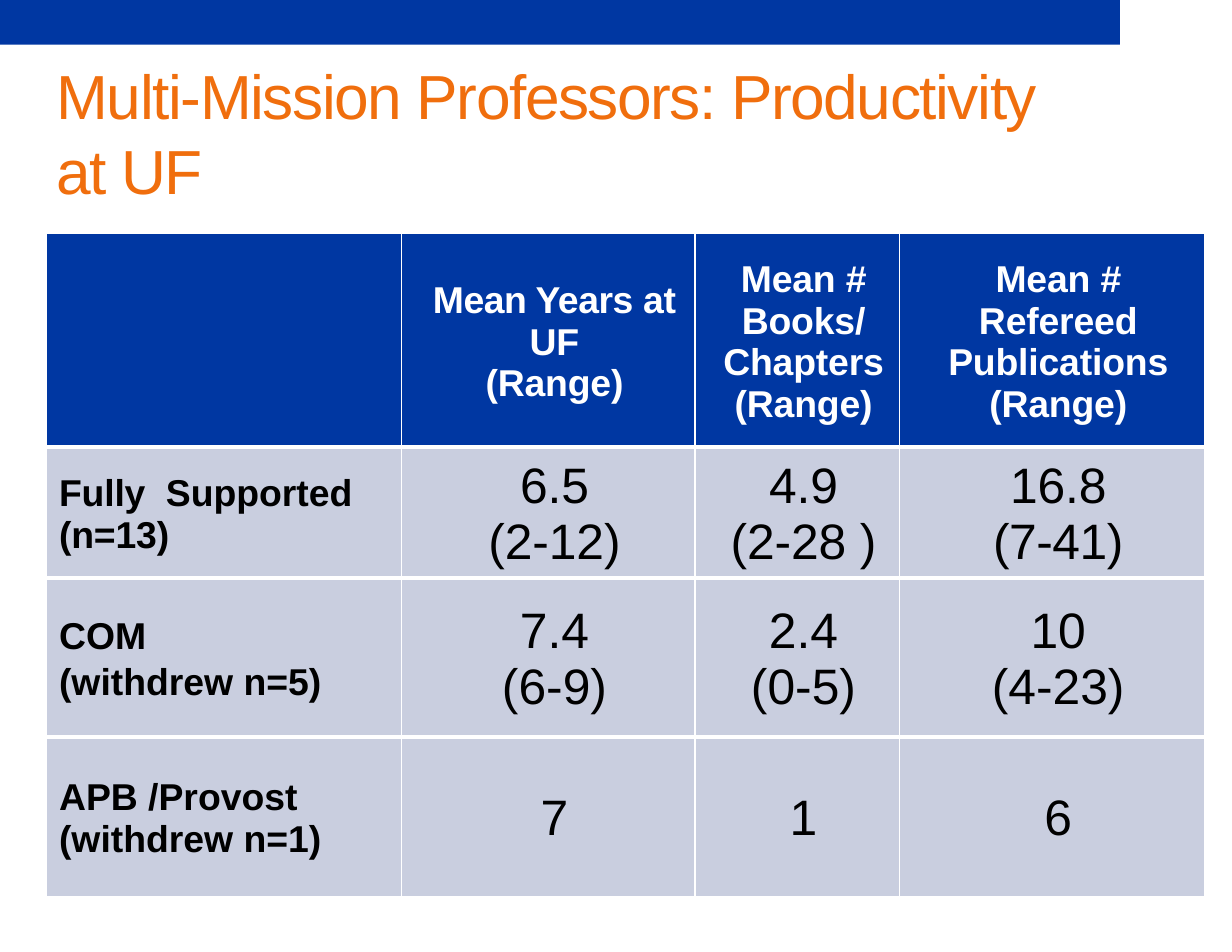
from lxml.etree import SubElement
from pptx import Presentation
from pptx.dml.color import RGBColor
from pptx.enum.shapes import MSO_SHAPE
from pptx.enum.text import MSO_ANCHOR, MSO_AUTO_SIZE, PP_ALIGN
from pptx.oxml.ns import qn
from pptx.util import Pt

BLUE, ORANGE, GREY = "0037A2", "F06E0D", "C9CEDF"
WHITE, BLACK = "FFFFFF", "000000"

COLUMN_WIDTHS = [228.25, 188.5, 131.75, 195.75]
ROW_HEIGHTS = [137.5, 84.25, 102.25, 102.25]

HEADINGS = [
    [],
    [[("Mean Years ", -0.3), ("at", -0.1)], [("UF", -0.1)], [("(Range)", -0.1)]],
    [[("Mean # Books/", -0.1)], [("Chapters", -0.1)], [("(Range)", -0.1)]],
    [[("Mean # Refereed", -0.1)], [("Publications", -0.1)], [("(Range)", -0.1)]],
]
GROUPS = [
    [
        [[("Fully  ", -0.1), ("Supported ", 0), ("(n=13)", -0.1)]],
        [[("6.5", -0.1)], [("(2-12)", -0.1)]],
        [[("4.9", -0.1)], [("(2-28 ", -0.1), (")", 0)]],
        [[("16.8", -0.1)], [("(7-41)", -0.3)]],
    ],
    [
        [[("COM", 0)], [("(withdrew n=5)", 0)]],
        [[("7.4", 0)], [("(6-9)", 0)]],
        [[("2.4", 0)], [("(0-5)", 0)]],
        [[("10", 0)], [("(4-23)", 0)]],
    ],
    [
        [[("APB /Provost\n(withdrew n=1)", 0)]],
        [[("7", 0)]],
        [[("1", 0)]],
        [[("6", 0)]],
    ],
]
GROUP_SPACE_BEFORE = [(2.4, 2.5), (2.6, 0), (2.4, 0)]


def colour(value):
    return RGBColor.from_string(value)


def add_run(paragraph, words, size, ink, bold=False, spacing=0):
    for number, line in enumerate(words.split("\n")):
        if number:
            paragraph.add_line_break()
        run = paragraph.add_run()
        run.text = line
        run.font.name = "Arial"
        run.font.size = Pt(size)
        run.font.bold = bold
        run.font.color.rgb = colour(ink)
        if spacing:
            run.font._element.set("spc", str(round(spacing * 100)))


def set_indent(paragraph, left):
    properties = paragraph._p.get_or_add_pPr()
    properties.set("marL", str(Pt(left)))
    properties.set("indent", "0")


def set_margins(holder, top):
    holder.margin_left = holder.margin_right = holder.margin_bottom = 0
    holder.margin_top = Pt(top)


def set_borders(cell, top, bottom):
    properties = cell._tc.get_or_add_tcPr()
    sides = [("a:lnL", 1), ("a:lnR", 1), ("a:lnT", top), ("a:lnB", bottom)]
    for position, (side, width) in enumerate(sides):
        line = SubElement(properties, qn(side), w=str(Pt(width)))
        fill = SubElement(line, qn("a:solidFill"))
        SubElement(fill, qn("a:srgbClr"), val=WHITE)
        properties.insert(position, line)


def add_band(slide, left, top, width, height):
    band = slide.shapes.add_shape(
        MSO_SHAPE.RECTANGLE, Pt(left), Pt(top), Pt(width), Pt(height))
    band.shadow.inherit = False
    band.fill.solid()
    band.fill.fore_color.rgb = colour(BLUE)
    band.line.fill.background()


def place_title(slide, left, top, width, height):
    title = slide.shapes.title
    title.left, title.top = Pt(left), Pt(top)
    title.width, title.height = Pt(width), Pt(height)
    frame = title.text_frame
    frame.word_wrap = True
    frame.auto_size = MSO_AUTO_SIZE.SHAPE_TO_FIT_TEXT
    frame.vertical_anchor = MSO_ANCHOR.TOP
    set_margins(frame, 0.9)
    heading = frame.paragraphs[0]
    set_indent(heading, 0.9)
    heading.alignment = PP_ALIGN.LEFT
    heading.line_spacing = 1.0
    heading.space_before = Pt(0)
    add_run(heading, "Multi-Mission Professors: Productivity at UF",
            40, ORANGE, spacing=-0.9)


def fill_cell(cell, content, fill, ink, size, bold, align, before, between):
    cell.fill.solid()
    cell.fill.fore_color.rgb = colour(fill)
    cell.vertical_anchor = MSO_ANCHOR.MIDDLE
    set_margins(cell, 2.3)
    frame = cell.text_frame
    for number, runs in enumerate(content):
        paragraph = frame.add_paragraph() if number else frame.paragraphs[0]
        set_indent(paragraph, 8)
        paragraph.alignment = align
        paragraph.space_before = Pt(between if number else before)
        for words, spacing in runs:
            add_run(paragraph, words, size, ink, bold, spacing)


def add_productivity_table(slide, left, top):
    productivity = slide.shapes.add_table(
        len(ROW_HEIGHTS), len(COLUMN_WIDTHS), Pt(left), Pt(top),
        Pt(sum(COLUMN_WIDTHS)), Pt(sum(ROW_HEIGHTS))).table
    productivity.horz_banding = False
    for column, width in zip(productivity.columns, COLUMN_WIDTHS):
        column.width = Pt(width)
    for row, height in zip(productivity.rows, ROW_HEIGHTS):
        row.height = Pt(height)

    for column, content in enumerate(HEADINGS):
        fill_cell(productivity.cell(0, column), content, BLUE, WHITE,
                  24, True, PP_ALIGN.CENTER, 2.4, 0.1)
    for row, (group, spaces) in enumerate(zip(GROUPS, GROUP_SPACE_BEFORE), 1):
        label_space, value_space = spaces
        label, *values = group
        fill_cell(productivity.cell(row, 0), label, GREY, BLACK,
                  24, True, PP_ALIGN.LEFT, label_space, label_space)
        for column, value in enumerate(values, 1):
            fill_cell(productivity.cell(row, column), value, GREY, BLACK,
                      32, False, PP_ALIGN.CENTER, value_space, 0)

    last = len(ROW_HEIGHTS) - 1
    for row in range(last + 1):
        for column in range(len(COLUMN_WIDTHS)):
            set_borders(productivity.cell(row, column),
                        3 if row else 1, 3 if row < last else 1)


def main():
    presentation = Presentation()
    presentation.slide_width, presentation.slide_height = Pt(792), Pt(612)
    slide = presentation.slides.add_slide(presentation.slide_layouts[5])
    add_band(slide, 0, 0, 720, 28.8)
    place_title(slide, 35.5, 36, 635.5, 98)
    add_productivity_table(slide, 30, 150)
    presentation.save("out.pptx")


if __name__ == "__main__":
    main()
